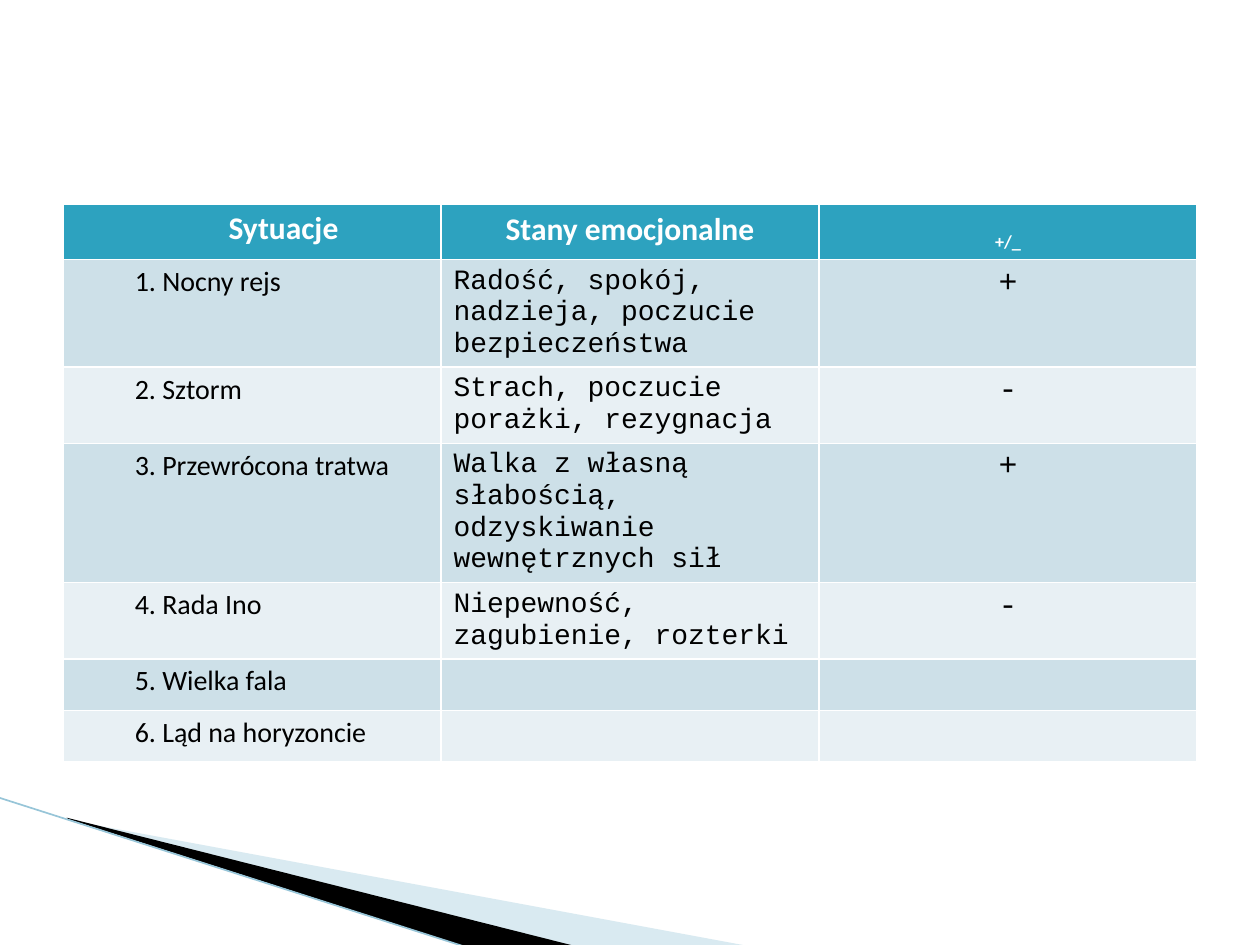
from dataclasses import dataclass

from lxml.etree import SubElement
from pptx import Presentation
from pptx.dml.color import RGBColor as RGB
from pptx.enum.shapes import MSO_CONNECTOR
from pptx.enum.text import PP_ALIGN
from pptx.oxml.ns import qn
from pptx.util import Inches, Pt


@dataclass(frozen=True)
class Theme:
    header: RGB = RGB.from_string("2DA2BF")
    bands: tuple = (RGB.from_string("CDE0E8"), RGB.from_string("E8F0F4"))
    white: RGB = RGB.from_string("FFFFFF")
    ink: RGB = RGB.from_string("000000")
    pale_wedge: RGB = RGB.from_string("A0CBDC")
    edge: RGB = RGB.from_string("97C5D8")
    sans: str = "Calibri"
    mono: str = "Courier New"
    large: Pt = Pt(18)
    body: Pt = Pt(16)


THEME = Theme()
HEADINGS = ("Sytuacje", "Stany emocjonalne", "+/_")
SITUATIONS = (
    ("1. Nocny rejs", "Radość, spokój, nadzieja, poczucie bezpieczeństwa", "+"),
    ("2. Sztorm", "Strach, poczucie porażki, rezygnacja", "-"),
    ("3. Przewrócona tratwa", "Walka z własną słabością, odzyskiwanie wewnętrznych sił", "+"),
    ("4. Rada Ino", "Niepewność, zagubienie, rozterki", "-"),
    ("5. Wielka fala", "", ""),
    ("6. Ląd na horyzoncie", "", ""),
)
HEADING_FONT = {"name": THEME.sans, "size": THEME.large, "bold": True}
COLUMN_FONTS = (
    {"name": THEME.sans, "size": THEME.body, "bold": False},
    {"name": THEME.mono, "size": THEME.body, "bold": False},
    {"name": THEME.mono, "size": THEME.large, "bold": False},
)


def add_wedge(slide, corners, color, opacity=None):
    points = [(Inches(x), Inches(y)) for x, y in corners]
    builder = slide.shapes.build_freeform(*points[0])
    builder.add_line_segments(points[1:], close=True)
    wedge = builder.convert_to_shape()
    wedge.shadow.inherit = False
    wedge.fill.solid()
    wedge.fill.fore_color.rgb = color
    wedge.line.fill.background()
    if opacity is not None:
        fill_color = wedge.fill._xPr.find(qn("a:solidFill"))[0]
        SubElement(fill_color, qn("a:alpha"), val=str(opacity * 1000))


def add_edge(slide, start, end):
    edge = slide.shapes.add_connector(
        MSO_CONNECTOR.STRAIGHT, *(Inches(v) for v in (*start, *end)))
    edge.line.color.rgb = THEME.edge
    edge.line.width = Pt(0.95)
    SubElement(edge._element.spPr, qn("a:effectLst"))


def fill_cell(cell, text, fill, font, color, centered, indented):
    cell.fill.solid()
    cell.fill.fore_color.rgb = fill
    paragraph = cell.text_frame.paragraphs[0]
    if indented:
        cell.margin_left = cell.margin_right = Inches(0.07)
        cell.margin_top = cell.margin_bottom = 0
        properties = paragraph._p.get_or_add_pPr()
        properties.set("marL", str(Inches(0.5)))
        properties.set("indent", "0")
        paragraph.line_spacing = 1.15
    if centered:
        paragraph.alignment = PP_ALIGN.CENTER
    if not text:
        return None
    run = paragraph.add_run()
    run.text = text
    for name, value in font.items():
        setattr(run.font, name, value)
    run.font.color.rgb = color
    return run


def add_situation_table(slide):
    table = slide.shapes.add_table(
        len(SITUATIONS) + 1, len(HEADINGS),
        Inches(0.5), Inches(1.62), Inches(9), Inches(2.87)).table
    for column, heading in enumerate(HEADINGS):
        run = fill_cell(table.cell(0, column), heading, THEME.header, HEADING_FONT,
                        THEME.white, centered=True, indented=column == 0)
    run.font._element.set("baseline", "-25000")  # the sign heading is a subscript
    for row, situation in enumerate(SITUATIONS, start=1):
        for column, text in enumerate(situation):
            fill_cell(table.cell(row, column), text, THEME.bands[(row - 1) % 2],
                      COLUMN_FONTS[column], THEME.ink,
                      centered=column == 2, indented=column == 0)


def main():
    deck = Presentation()
    deck.slide_width, deck.slide_height = Inches(10), Inches(7.5)
    slide = deck.slides.add_slide(deck.slide_layouts[6])
    add_wedge(slide, [(0.55, 6.51), (5.95, 7.51), (4.56, 7.51), (0.55, 6.5)],
              THEME.pale_wedge, opacity=40)
    add_wedge(slide, [(0.53, 6.49), (4.57, 7.51), (3.72, 7.52), (0.54, 6.5)], THEME.ink)
    add_edge(slide, (-0.01, 6.33), (3.71, 7.52))
    add_situation_table(slide)
    deck.save("out.pptx")


if __name__ == "__main__":
    main()
